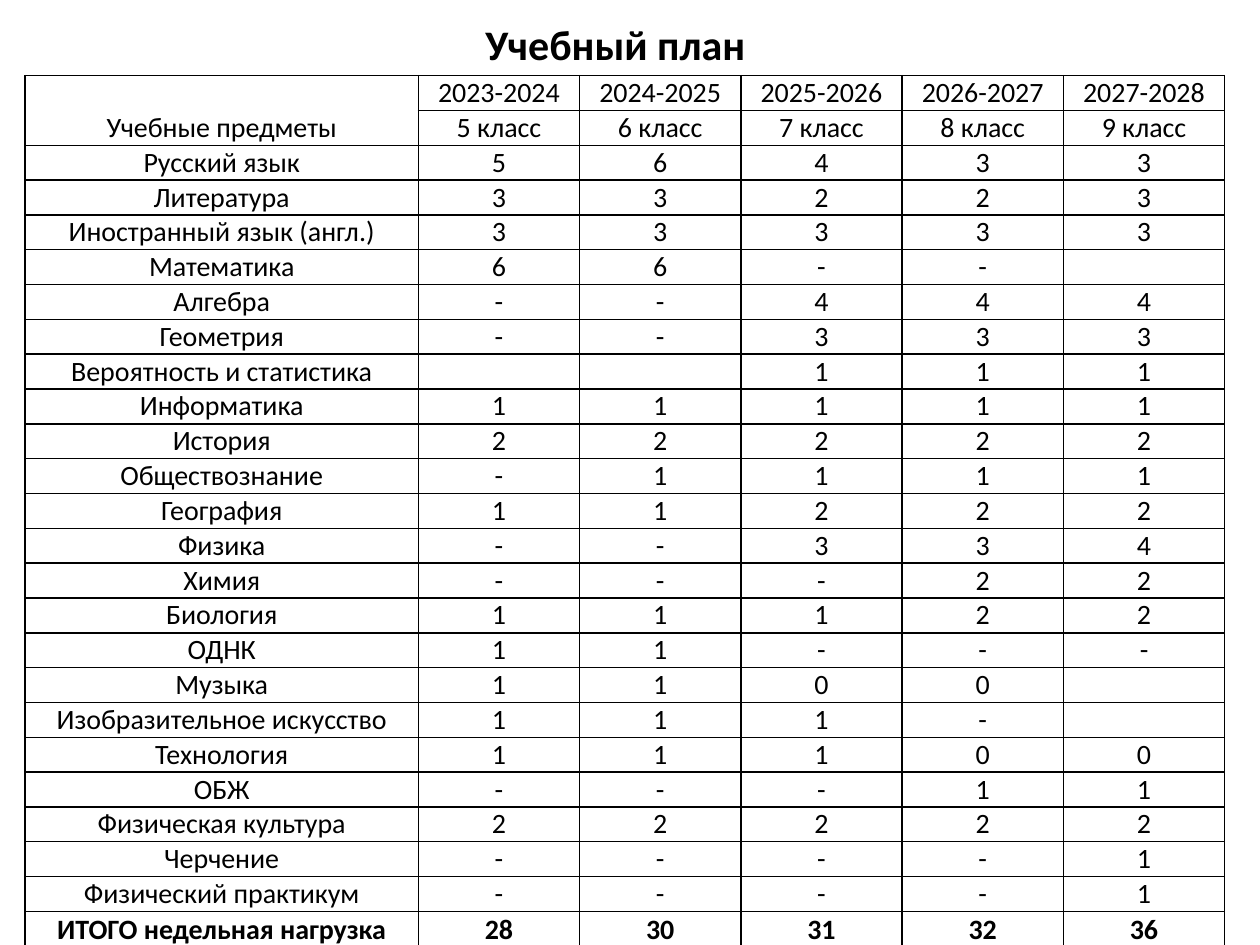
from lxml import etree
from pptx import Presentation
from pptx import util as u
from pptx.dml.color import RGBColor
from pptx.enum import text
from pptx.oxml import ns

COLORS = {"ink": "000000"}
FONT = "Calibri"
HEADS = [
    ["Учебные предметы", "2023-2024", "2024-2025", "2025-2026", "2026-2027", "2027-2028"],
    ["", "5 класс", "6 класс", "7 класс", "8 класс", "9 класс"],
]
HOURS = [
    ["Русский язык", "5", "6", "4", "3", "3"],
    ["Литература", "3", "3", "2", "2", "3"],
    ["Иностранный язык (англ.)", "3", "3", "3", "3", "3"],
    ["Математика", "6", "6", "-", "-", ""],
    ["Алгебра", "-", "-", "4", "4", "4"],
    ["Геометрия", "-", "-", "3", "3", "3"],
    ["Вероятность и статистика", "", "", "1", "1", "1"],
    ["Информатика", "1", "1", "1", "1", "1"],
    ["История", "2", "2", "2", "2", "2"],
    ["Обществознание", "-", "1", "1", "1", "1"],
    ["География", "1", "1", "2", "2", "2"],
    ["Физика", "-", "-", "3", "3", "4"],
    ["Химия", "-", "-", "-", "2", "2"],
    ["Биология", "1", "1", "1", "2", "2"],
    ["ОДНК", "1", "1", "-", "-", "-"],
    ["Музыка", "1", "1", "0", "0", ""],
    ["Изобразительное искусство", "1", "1", "1", "-", ""],
    ["Технология", "1", "1", "1", "0", "0"],
    ["ОБЖ", "-", "-", "-", "1", "1"],
    ["Физическая культура", "2", "2", "2", "2", "2"],
    ["Черчение", "-", "-", "-", "-", "1"],
    ["Физический практикум", "-", "-", "-", "-", "1"],
]
TOTAL = ["ИТОГО недельная нагрузка", "28", "30", "31", "32", "36"]


def write(frame, words, size, bold=False):
    """Put one centred line into a text frame."""
    frame.text = words
    line = frame.paragraphs[0]
    line.alignment = text.PP_ALIGN.CENTER
    for run in line.runs:
        run.font.name = FONT
        run.font.size = u.Pt(size)
        run.font.bold = bold
        run.font.color.rgb = RGBColor.from_string(COLORS["ink"])
    if not words:
        end = etree.SubElement(line._p, ns.qn("a:endParaRPr"))
        end.set("sz", str(size * 100))


def border(cell):
    """Draw a thin line on all four sides of a cell."""
    props = cell._tc.get_or_add_tcPr()
    for side in ("lnL", "lnR", "lnT", "lnB"):
        line = etree.SubElement(props, ns.qn(f"a:{side}"), w=str(u.Pt(1)))
        fill = etree.SubElement(line, ns.qn("a:solidFill"))
        etree.SubElement(fill, ns.qn("a:srgbClr"), val=COLORS["ink"])


def add_title(slide, words):
    """Add the heading above the table."""
    box = slide.shapes.add_textbox(u.Inches(0.51), u.Inches(0.2), u.Inches(8.75), u.Inches(0.3))
    frame = box.text_frame
    frame.word_wrap = True
    frame.vertical_anchor = text.MSO_ANCHOR.MIDDLE
    write(frame, words, 24, True)


def add_plan(slide):
    """Add the table of weekly hours by subject and year."""
    rows = HEADS + HOURS + [TOTAL]
    body, last = u.Inches(6.64), u.Inches(0.29)
    table = slide.shapes.add_table(
        len(rows), len(TOTAL), u.Inches(0.2), u.Inches(0.6), u.Inches(9.53), body + last
    ).table
    table.first_row = table.horz_banding = False
    for num, col in enumerate(table.columns):
        col.width = u.Inches(1.28 if num else 3.12)
    for row, items in zip(table.rows, rows):
        row.height = last if items is TOTAL else body // (len(rows) - 1)
        for cell, words in zip(row.cells, items):
            cell.margin_left = cell.margin_right = cell.margin_top = cell.margin_bottom = 0
            cell.vertical_anchor = text.MSO_ANCHOR.TOP if items in HEADS else text.MSO_ANCHOR.MIDDLE
            border(cell)
            cell.fill.background()
            write(cell.text_frame, words, 16, items is TOTAL)
    corner = table.cell(0, 0)
    corner.merge(table.cell(1, 0))
    corner.vertical_anchor = text.MSO_ANCHOR.BOTTOM


def main():
    """Build and save the curriculum slide."""
    deck = Presentation()
    deck.slide_width, deck.slide_height = u.Inches(10), u.Inches(7.5)
    slide = deck.slides.add_slide(deck.slide_layouts[6])
    add_title(slide, "Учебный план")
    add_plan(slide)
    deck.save("out.pptx")


if __name__ == "__main__":
    main()
